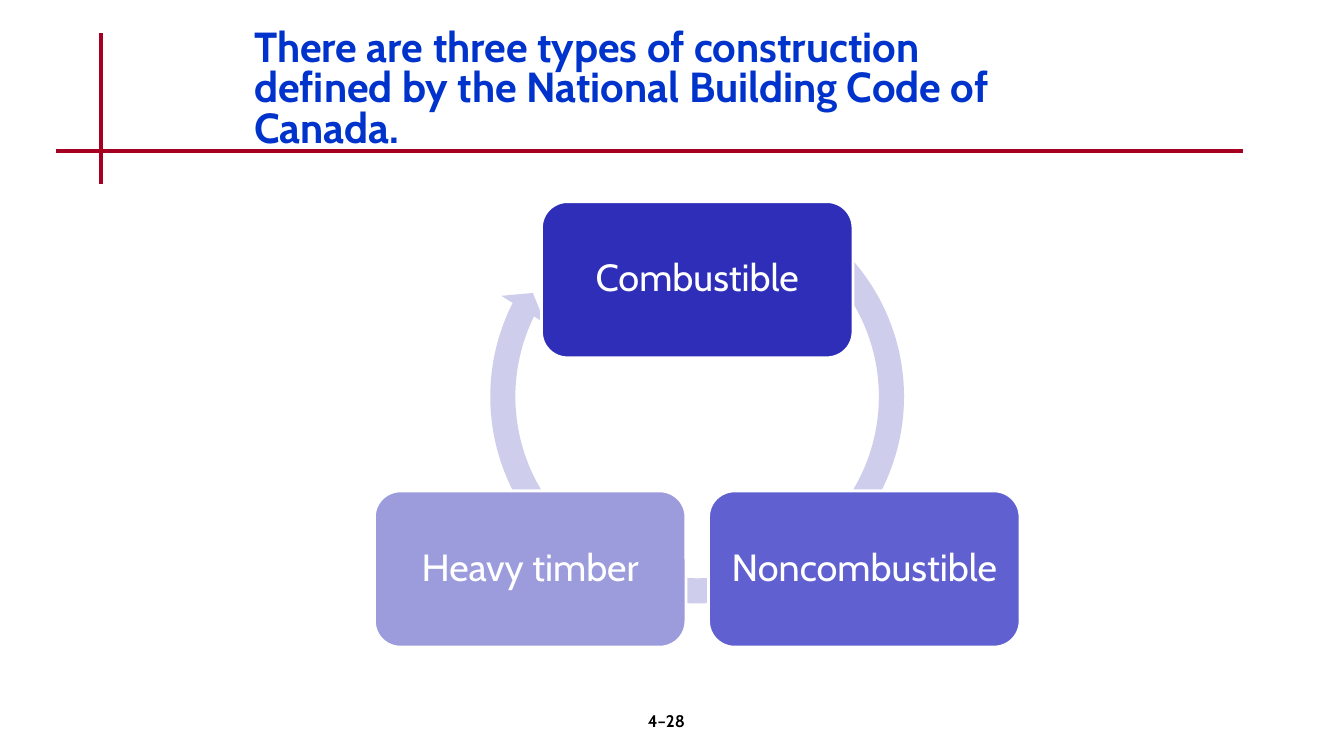
from math import cos, radians, sin

from lxml.etree import SubElement
from pptx import Presentation
from pptx.dml.color import RGBColor
from pptx.enum.shapes import MSO_CONNECTOR, MSO_SHAPE
from pptx.enum.text import MSO_ANCHOR, MSO_AUTO_SIZE, PP_ALIGN
from pptx.oxml.ns import qn
from pptx.util import Inches, Pt

FONT = "Cabin"
WHITE = RGBColor(0xFF, 0xFF, 0xFF)
BLACK = RGBColor(0x00, 0x00, 0x00)
TITLE_BLUE = RGBColor(0x00, 0x33, 0xCC)
RULE_RED = RGBColor(0xA5, 0x00, 0x21)
RING_LILAC = RGBColor(0xCE, 0xCE, 0xEC)
TYPES = [
    ("Combustible", RGBColor(0x2E, 0x2E, 0xB9)),
    ("Noncombustible", RGBColor(0x60, 0x60, 0xD0)),
    ("Heavy timber", RGBColor(0x9C, 0x9C, 0xDD)),
]
NODE_WIDTH, NODE_HEIGHT = 3.09, 1.55
RING_SIZE = 4.37
RING_ADJUSTMENTS = (0.057, 3.405, 123.944, 182.893, 0.059)


def add_span(para, text, size, color, bold=False):
    span = para.add_run()
    span.text = text
    span.font.name = FONT
    span.font.size = Pt(size)
    span.font.bold = bold
    span.font.color.rgb = color


def add_rule(page, start, end):
    rule = page.shapes.add_connector(
        MSO_CONNECTOR.STRAIGHT, *(Inches(value) for value in start + end))
    rule.line.color.rgb = RULE_RED
    rule.line.width = Pt(3)
    SubElement(rule._element.spPr, qn("a:effectLst"))


def add_heading(page, left, top, width, height):
    add_rule(page, (1, top + 0.08), (1, top + 1.58))
    add_rule(page, (0.56, top + 1.25), (12.33, top + 1.25))
    title = page.shapes.title
    title.left, title.top = Inches(left), Inches(top)
    title.width, title.height = Inches(width), Inches(height)
    frame = title.text_frame
    frame.word_wrap = True
    frame.auto_size = MSO_AUTO_SIZE.NONE
    frame.vertical_anchor = MSO_ANCHOR.TOP
    para = frame.paragraphs[0]
    para.alignment = PP_ALIGN.LEFT
    para.line_spacing = 0.8
    add_span(para, "There are three types of construction defined by the "
                   "National Building Code of Canada.", 30, TITLE_BLUE, True)


def add_filled(page, kind, left, top, width, height, color):
    shape = page.shapes.add_shape(
        kind, Inches(left), Inches(top), Inches(width), Inches(height))
    shape.shadow.inherit = False
    shape.fill.solid()
    shape.fill.fore_color.rgb = color
    return shape


def add_node(page, center_x, center_y, label, color):
    node = add_filled(page, MSO_SHAPE.ROUNDED_RECTANGLE,
                      center_x - NODE_WIDTH / 2, center_y - NODE_HEIGHT / 2,
                      NODE_WIDTH, NODE_HEIGHT, color)
    node.line.color.rgb = WHITE
    node.line.width = Pt(2)
    frame = node.text_frame
    frame.word_wrap = True
    frame.vertical_anchor = MSO_ANCHOR.MIDDLE
    frame.margin_left = frame.margin_right = Inches(0.11)
    frame.margin_top = frame.margin_bottom = Inches(0.11)
    para = frame.paragraphs[0]
    para.alignment = PP_ALIGN.CENTER
    para.line_spacing = 0.9
    add_span(para, label, 27, WHITE)


def add_cycle(page, left, top, width, height):
    center_x = left + width / 2
    radius = (height - NODE_HEIGHT) / 1.5
    center_y = top + NODE_HEIGHT / 2 + radius
    ring = add_filled(page, MSO_SHAPE.CIRCULAR_ARROW, center_x - RING_SIZE / 2,
                      top - 0.25, RING_SIZE, RING_SIZE, RING_LILAC)
    ring.line.fill.background()
    for index, value in enumerate(RING_ADJUSTMENTS):
        ring.adjustments[index] = value
    for index, (label, color) in enumerate(TYPES):
        angle = radians(index * 360 / len(TYPES))
        add_node(page, center_x + radius * sin(angle),
                 center_y - radius * cos(angle), label, color)


def add_page_number(page, left, top, width, height):
    box = page.shapes.add_textbox(
        Inches(left), Inches(top), Inches(width), Inches(height))
    box.text_frame.word_wrap = True
    para = box.text_frame.paragraphs[0]
    para.alignment = PP_ALIGN.CENTER
    add_span(para, "4–28", 12, BLACK, True)


def main():
    deck = Presentation()
    deck.slide_width, deck.slide_height = Inches(13.33), Inches(7.5)
    page = deck.slides.add_slide(deck.slide_layouts[5])
    page.background.fill.solid()
    page.background.fill.fore_color.rgb = WHITE
    add_heading(page, 2.42, 0.25, 8.08, 1)
    add_page_number(page, 5.22, 7, 2.78, 0.5)
    add_cycle(page, 3.71, 2, 6.41, 4.42)
    deck.save("out.pptx")


if __name__ == "__main__":
    main()
